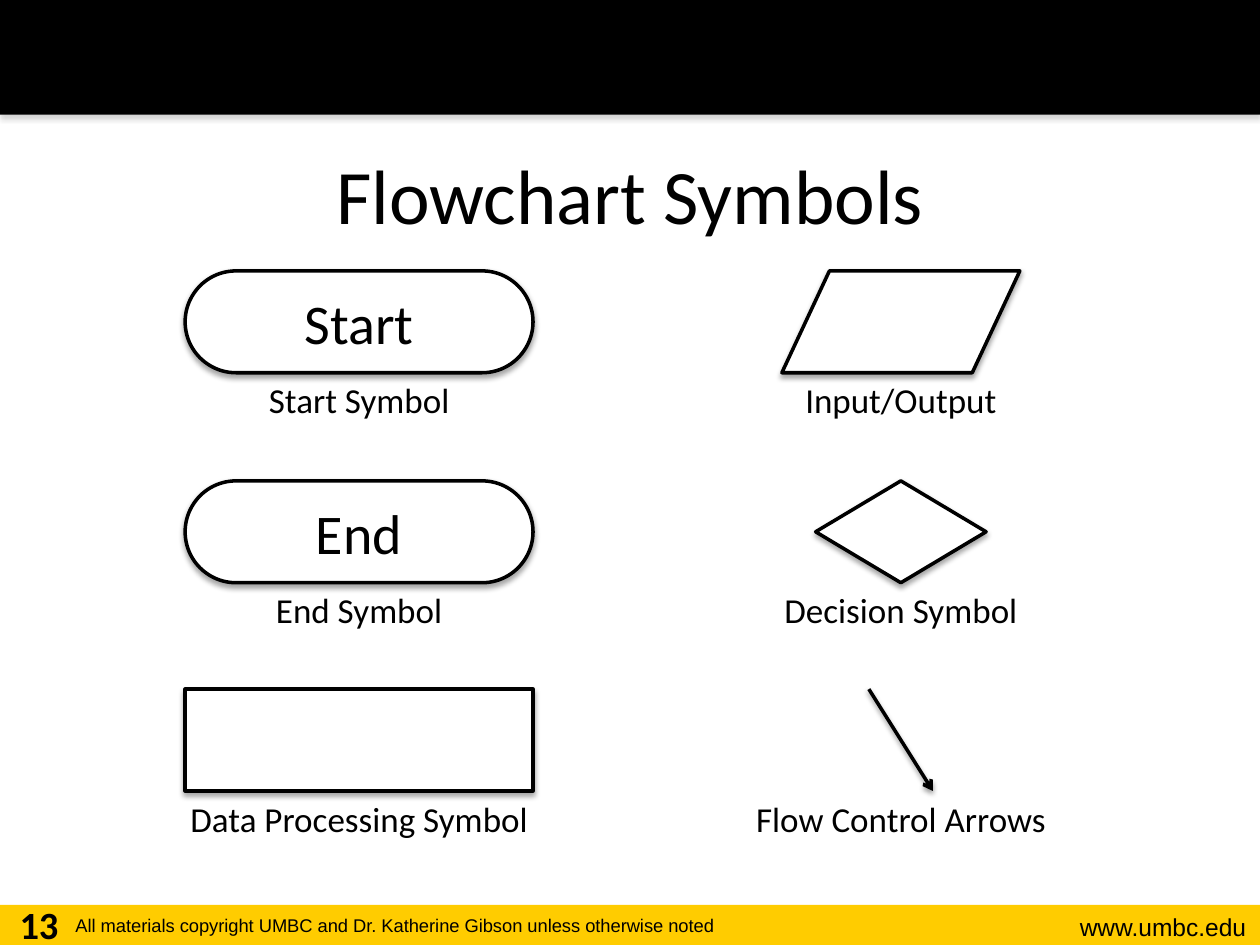
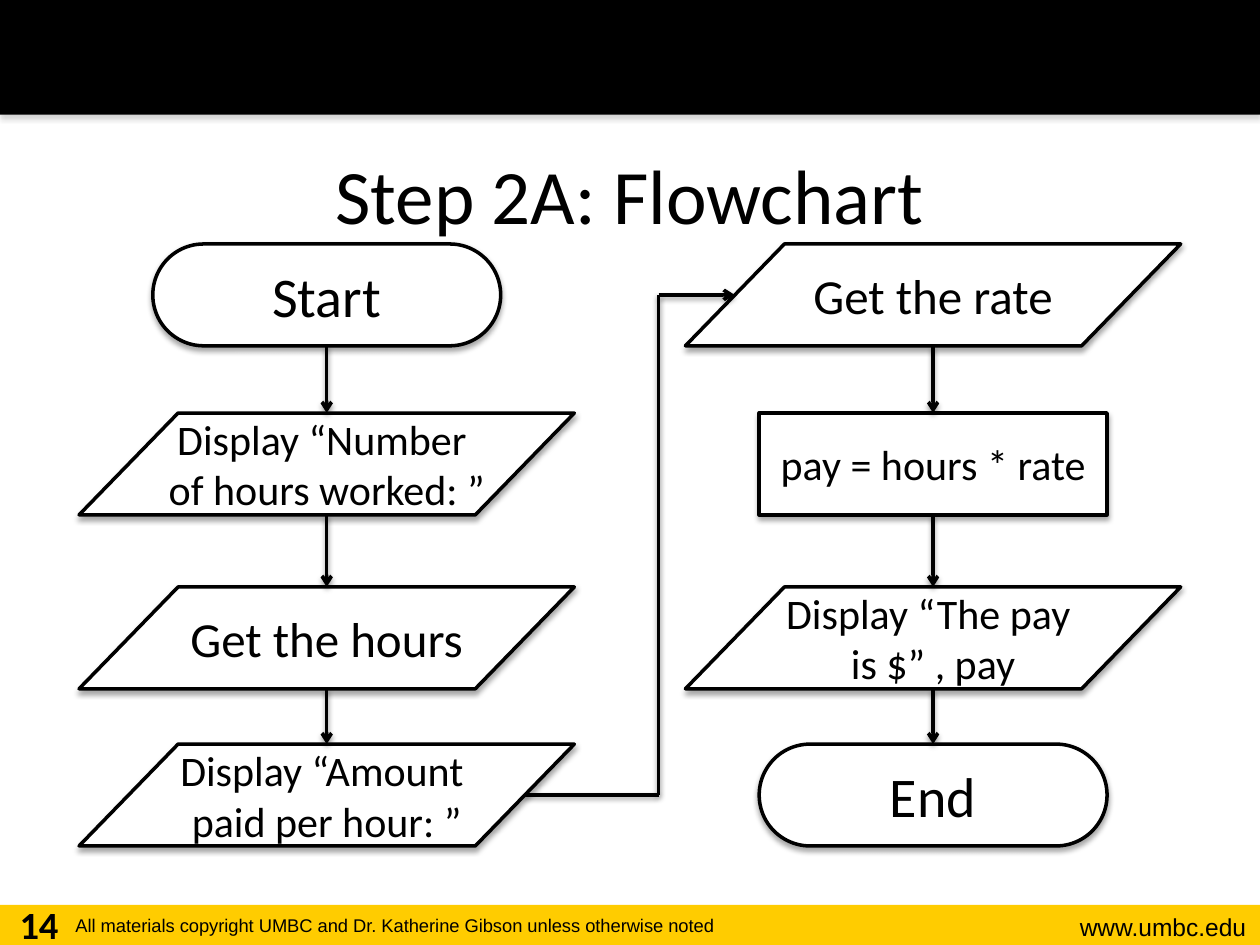
from lxml import etree
from pptx import Presentation
from pptx.dml.color import RGBColor
from pptx.enum.shapes import MSO_CONNECTOR, MSO_SHAPE
from pptx.enum.text import MSO_ANCHOR, PP_ALIGN
from pptx.oxml.ns import qn
from pptx.util import Pt

COLOURS = {"ink": "000000", "paper": "FFFFFF", "gold": "FFCC00", "grey": "808080"}
TERMINAL = MSO_SHAPE.ROUNDED_RECTANGLE
PROCESS = MSO_SHAPE.RECTANGLE
DATA = MSO_SHAPE.FLOWCHART_DATA
DECISION = MSO_SHAPE.DIAMOND
STRAIGHT = MSO_CONNECTOR.STRAIGHT
TOP, MIDDLE = MSO_ANCHOR.TOP, MSO_ANCHOR.MIDDLE
LEFT, CENTER, RIGHT = PP_ALIGN.LEFT, PP_ALIGN.CENTER, PP_ALIGN.RIGHT

PAGE_WIDTH, PAGE_HEIGHT = 720, 540
SYMBOL_HEIGHT = 58.2
TERMINAL_WIDTH, DATA_WIDTH = 198.8, 283
CAPTION_WIDTH, CAPTION_HEIGHT = 226, 31.5


def colour(name):
    """Return the named palette colour."""
    return RGBColor.from_string(COLOURS[name])


def add_shadow(element, tint="ink", opacity=35, distance=1.8):
    """Give a shape or connector element a soft shadow straight below it."""
    properties = element.spPr
    effects = properties.find(qn("a:effectLst"))
    if effects is None:
        effects = etree.SubElement(properties, qn("a:effectLst"))
    shadow = etree.SubElement(
        effects, qn("a:outerShdw"), blurRad=str(Pt(3.1)), dist=str(Pt(distance)),
        dir="5400000", rotWithShape="0")
    shade = etree.SubElement(shadow, qn("a:srgbClr"), val=COLOURS[tint])
    etree.SubElement(shade, qn("a:alpha"), val=str(opacity * 1000))


def write(shape, text, size, font="Calibri", align=CENTER, anchor=MIDDLE,
          bold=False, wrap=True):
    """Put one styled paragraph into a shape or text box."""
    frame = shape.text_frame
    frame.word_wrap = wrap
    frame.vertical_anchor = anchor
    frame.text = text
    para = frame.paragraphs[0]
    para.alignment = align
    para.font.size = Pt(size)
    para.font.name = font
    para.font.bold = bold
    para.font.color.rgb = colour("ink")


def add_text(page, left, top, width, height, text, size, **style):
    """Add a text box."""
    box = page.shapes.add_textbox(Pt(left), Pt(top), Pt(width), Pt(height))
    write(box, text, size, **{"anchor": TOP, **style})


def add_band(page, top, height, fill):
    """Add a plain band across the page."""
    band = page.shapes.add_shape(PROCESS, 0, Pt(top), Pt(PAGE_WIDTH), Pt(height))
    band.fill.solid()
    band.fill.fore_color.rgb = colour(fill)
    band.line.fill.background()
    band.shadow.inherit = False
    return band


def add_symbol(page, kind, center, top, width, text="", size=32):
    """Add an outlined flowchart symbol centred on a column."""
    symbol = page.shapes.add_shape(
        kind, Pt(center - width / 2), Pt(top), Pt(width), Pt(SYMBOL_HEIGHT))
    if kind == TERMINAL:
        symbol.adjustments[0] = 0.5
    symbol.fill.solid()
    symbol.fill.fore_color.rgb = colour("paper")
    symbol.line.color.rgb = colour("ink")
    symbol.line.width = Pt(2)
    symbol.shadow.inherit = False
    add_shadow(symbol.element)
    if text:
        write(symbol, text, size, wrap=kind != DATA)


def add_flow(page, start, end, arrow=True):
    """Add a flow line, with an arrowhead at its end unless told otherwise."""
    flow = page.shapes.add_connector(STRAIGHT, *map(Pt, start + end))
    flow.line.color.rgb = colour("ink")
    flow.line.width = Pt(2)
    if arrow:
        etree.SubElement(flow.line._get_or_add_ln(), qn("a:tailEnd"), type="arrow")
    add_shadow(flow.element, opacity=38, distance=1.6)


def add_page(deck, title, number):
    """Add a page with the shared bands, footer and title."""
    page = deck.slides.add_slide(deck.slide_layouts[6])
    add_band(page, 517, 23, "gold")
    header = add_band(page, 0, 65.5, "ink")
    add_shadow(header.element, "grey")
    add_text(page, 576, 517.8, 143.3, 24.2, "www.umbc.edu", 14, font="Arial", align=RIGHT)
    add_text(page, 36, 519, 472, 20.5,
             "All materials copyright UMBC and Dr. Katherine Gibson unless otherwise noted",
             10.5, font="Arial", align=LEFT)
    add_text(page, 36, 65.5, 648, 90, title, 44, anchor=MIDDLE)
    add_text(page, 0, 511.2, 44.6, 28.8, str(number), 22, bold=True)
    return page


def build_symbols(deck):
    """Build the page that names each flowchart symbol."""
    page = add_page(deck, "Flowchart Symbols", 13)
    left, right = 205.2, 514.8
    rows = (154.8, 274.8, 393.8)
    symbols = (
        (TERMINAL, left, rows[0], TERMINAL_WIDTH, "Start", "Start Symbol"),
        (TERMINAL, left, rows[1], TERMINAL_WIDTH, "End", "End Symbol"),
        (PROCESS, left, rows[2], TERMINAL_WIDTH, "", "Data Processing Symbol"),
        (DATA, right, rows[0], 136, "", "Input/Output"),
        (DECISION, right, rows[1], 97.4, "", "Decision Symbol"),
        (None, right, rows[2], 36.6, "", "Flow Control Arrows"),
    )
    for kind, center, top, width, text, caption in symbols:
        bottom = top + SYMBOL_HEIGHT
        if kind is None:
            add_flow(page, (center - width / 2, top), (center + width / 2, bottom))
        else:
            add_symbol(page, kind, center, top, width, text)
        add_text(page, center - CAPTION_WIDTH / 2, bottom, CAPTION_WIDTH,
                 CAPTION_HEIGHT, caption, 20)


def build_flowchart(deck):
    """Build the page with the pay flowchart in two columns."""
    page = add_page(deck, "Step 2A: Flowchart", 14)
    rows = (139.4, 236, 335.4, 425.2)
    columns = (
        (186.7, (
            (TERMINAL, "Start", 32),
            (DATA, "Display “Number \vof hours worked: ”", 24),
            (DATA, "Get the hours", 28),
            (DATA, "Display “Amount \vpaid per hour: ”", 24))),
        (533.2, (
            (DATA, "Get the rate", 28),
            (PROCESS, "pay = hours * rate", 24),
            (DATA, "Display “The pay \vis $” , pay", 24),
            (TERMINAL, "End", 32))),
    )
    for center, steps in columns:
        for top, (kind, text, size) in zip(rows, steps):
            width = DATA_WIDTH if kind == DATA else TERMINAL_WIDTH
            add_symbol(page, kind, center, top, width, text, size)
        for top, following in zip(rows, rows[1:]):
            add_flow(page, (center, top + SYMBOL_HEIGHT), (center, following))
    turn = 376.4
    upper, lower = rows[0] + SYMBOL_HEIGHT / 2, rows[-1] + SYMBOL_HEIGHT / 2
    add_flow(page, (turn, upper), (419.8, upper))
    add_flow(page, (300, lower), (turn, lower), arrow=False)
    add_flow(page, (turn, upper), (turn, lower), arrow=False)


def main():
    """Build and save the deck."""
    deck = Presentation()
    deck.slide_width, deck.slide_height = Pt(PAGE_WIDTH), Pt(PAGE_HEIGHT)
    build_symbols(deck)
    build_flowchart(deck)
    deck.save("out.pptx")


if __name__ == "__main__":
    main()
